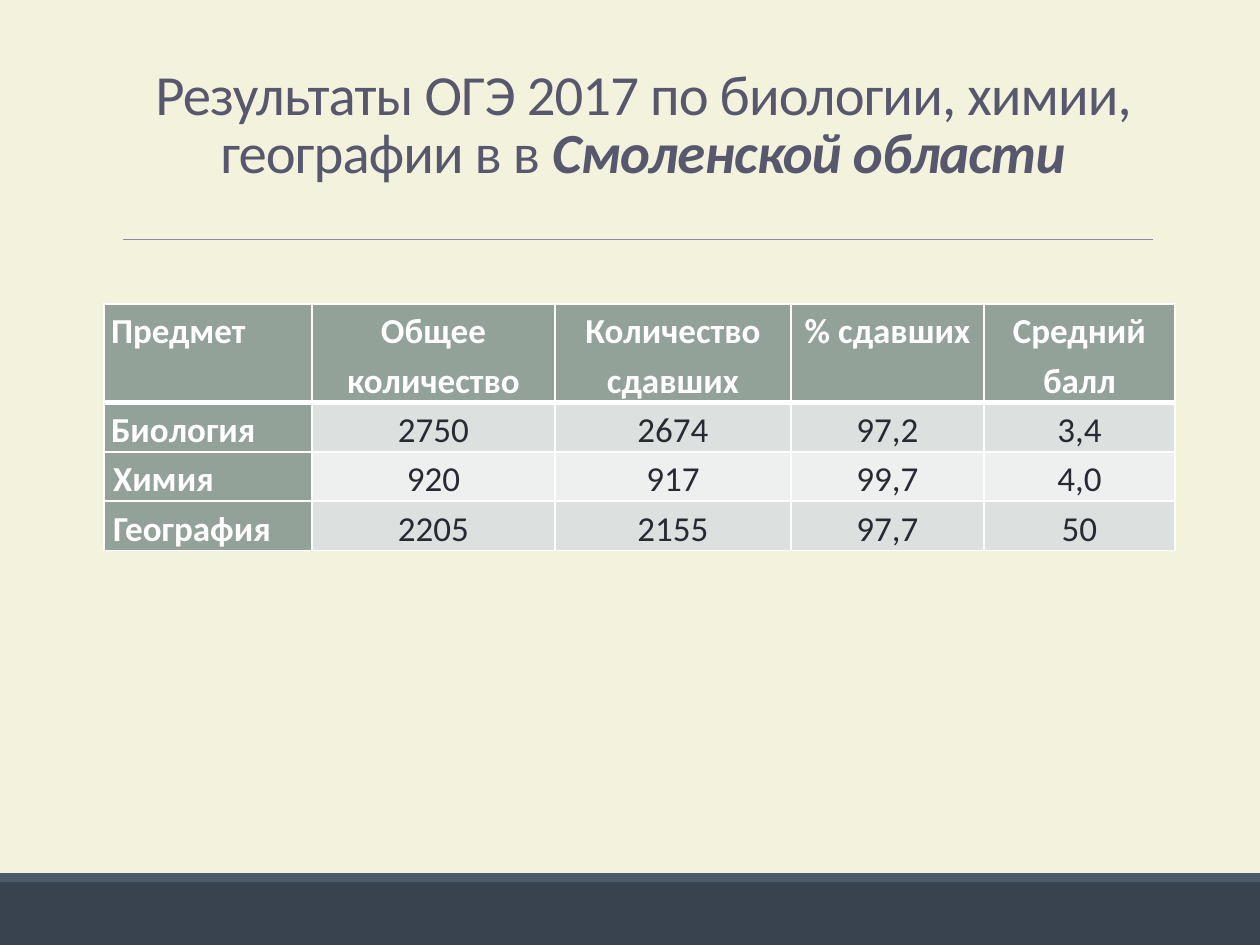
from dataclasses import dataclass

from lxml.etree import SubElement
from pptx import Presentation
from pptx.dml.color import RGBColor
from pptx.enum.shapes import MSO_CONNECTOR, MSO_SHAPE
from pptx.enum.text import MSO_ANCHOR, MSO_AUTO_SIZE, PP_ALIGN
from pptx.oxml.ns import qn
from pptx.util import Pt


@dataclass(frozen=True)
class Theme:
    font: str = "Calibri"
    title_size: float = 32.4
    table_size: int = 20
    background: str = "F3F2DC"
    footer: str = "394350"
    footer_edge: str = "4C5A6A"
    rule: str = "8A8AA3"
    title: str = "57576E"
    heading_fill: str = "93A299"
    bands: tuple = ("DCE0DE", "EEF0EF")
    white: str = "FFFFFF"
    text: str = "292934"


theme = Theme()


def px(length):
    """Turn a length at 126 pixels to the inch into EMU."""
    return round(length * 914400 / 126)


def add_border(cell, side, width):
    """Draw one side (L, R, T or B) of a cell in white, width in points."""
    properties = cell._tc.get_or_add_tcPr()
    line = SubElement(properties, qn(f"a:ln{side}"), w=str(Pt(width)))
    fill = SubElement(line, qn("a:solidFill"))
    SubElement(fill, qn("a:srgbClr"), val=theme.white)


presentation = Presentation()
presentation.slide_width = px(1260)
presentation.slide_height = px(945)
slide = presentation.slides.add_slide(presentation.slide_layouts[5])
slide.background.fill.solid()
slide.background.fill.fore_color.rgb = RGBColor.from_string(theme.background)

# Footer bands and the rule under the title
for top, height, color in ((882, 63, theme.footer), (873, 9, theme.footer_edge)):
    band = slide.shapes.add_shape(MSO_SHAPE.RECTANGLE, 0, px(top), px(1260), px(height))
    band.shadow.inherit = False
    band.fill.solid()
    band.fill.fore_color.rgb = RGBColor.from_string(color)
    band.line.fill.background()

rule = slide.shapes.add_connector(MSO_CONNECTOR.STRAIGHT, px(123), px(239), px(1153), px(239))
rule.line.color.rgb = RGBColor.from_string(theme.rule)
rule.line.width = Pt(0.5)
SubElement(rule._element.spPr, qn("a:effectLst"))

# Title
title = slide.shapes.title
title.left, title.top, title.width, title.height = px(123), px(37), px(1040), px(154)
title_frame = title.text_frame
title_frame.word_wrap = True
title_frame.auto_size = MSO_AUTO_SIZE.NONE
title_frame.vertical_anchor = MSO_ANCHOR.BOTTOM
paragraph = title_frame.paragraphs[0]
paragraph.alignment = PP_ALIGN.CENTER
paragraph.line_spacing = 0.85
for text, emphasized in (
    ("Результаты ОГЭ 2017 по биологии, химии, географии в в ", False),
    ("Смоленской области", True),
):
    run = paragraph.add_run()
    run.text = text
    run.font.name = theme.font
    run.font.size = Pt(theme.title_size)
    run.font.color.rgb = RGBColor.from_string(theme.title)
    run.font.bold = run.font.italic = emphasized
    run.font._element.set("spc", "-50")

# Results table
results = (
    ("Предмет", "Общее количество", "Количество сдавших", "% сдавших", "Средний балл"),
    ("Биология", "2750", "2674", "97,2", "3,4"),
    ("Химия", "920", "917", "99,7", "4,0"),
    ("География", "2205", "2155", "97,7", "50"),
)
column_widths = (208, 243, 236, 193, 191)
row_heights = (98, 49, 49, 49)
table = slide.shapes.add_table(
    len(results), len(column_widths),
    px(104), px(304), px(sum(column_widths)), px(sum(row_heights)),
).table
for column, width in zip(table.columns, column_widths):
    column.width = px(width)

for row_index, values in enumerate(results):
    table.rows[row_index].height = px(row_heights[row_index])
    for column_index, value in enumerate(values):
        cell = table.cell(row_index, column_index)
        is_heading = row_index == 0 or column_index == 0
        for side in "LRTB":
            under_header = (row_index, side) in ((0, "B"), (1, "T"))
            add_border(cell, side, 3 if under_header else 1)
        fill_color = theme.heading_fill if is_heading else theme.bands[(row_index - 1) % 2]
        cell.fill.solid()
        cell.fill.fore_color.rgb = RGBColor.from_string(fill_color)
        cell.margin_left = cell.margin_right = px(9 if row_index > 1 else 7)
        cell.margin_top = cell.margin_bottom = 0
        is_last = row_index == len(results) - 1
        cell.vertical_anchor = MSO_ANCHOR.BOTTOM if is_last else MSO_ANCHOR.TOP
        cell.text_frame.text = value
        paragraph = cell.text_frame.paragraphs[0]
        paragraph.alignment = PP_ALIGN.CENTER if column_index else PP_ALIGN.LEFT
        paragraph.line_spacing = 1.15
        font = paragraph.runs[0].font
        font.name = theme.font
        font.size = Pt(theme.table_size)
        font.bold = is_heading
        font.color.rgb = RGBColor.from_string(theme.white if is_heading else theme.text)

presentation.save("out.pptx")
